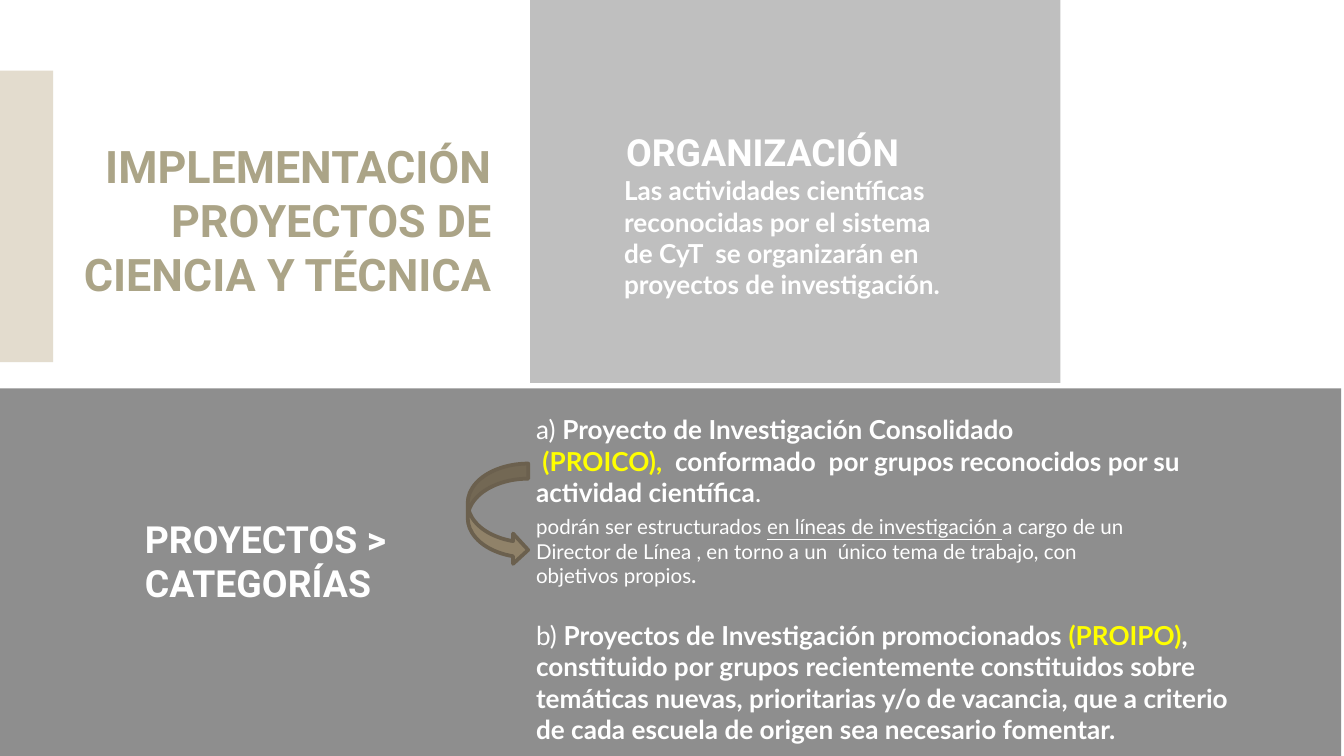
"""Build the slide on how science projects are organised."""
from dataclasses import dataclass, field
from typing import Any, NamedTuple

from lxml import etree
from pptx import Presentation
from pptx.dml.color import RGBColor
from pptx.enum.shapes import MSO_SHAPE
from pptx.enum.text import MSO_ANCHOR, MSO_AUTO_SIZE, PP_ALIGN
from pptx.oxml.ns import qn
from pptx.util import Emu, Pt

RECT, ARROW = MSO_SHAPE.RECTANGLE, MSO_SHAPE.CURVED_RIGHT_ARROW
TOP, MIDDLE, BOTTOM = MSO_ANCHOR.TOP, MSO_ANCHOR.MIDDLE, MSO_ANCHOR.BOTTOM
FIXED, GROW = MSO_AUTO_SIZE.NONE, MSO_AUTO_SIZE.SHAPE_TO_FIT_TEXT
LEFT, RIGHT = PP_ALIGN.LEFT, PP_ALIGN.RIGHT
SCALE = 4572
WIDE, HIGH = 2000, 1125
TITLE_ONLY = 5


@dataclass(frozen=True)
class Theme:
    """Colours, fonts and type sizes of the slide."""

    white: str = "FFFFFF"
    khaki: str = "ABA487"
    sand: str = "CFC3AC"
    silver: str = "BFBFBF"
    grey: str = "8E8E8E"
    yellow: str = "FFFF00"
    bronze: str = "908269"
    umber: str = "6B604E"
    head: str = "Roboto"
    text: str = "Lato"
    title: int = 24
    label: int = 20
    body: int = 14
    small: int = 11


THEME = Theme()


class Box(NamedTuple):
    """Place and size in px."""

    left: int
    top: int
    width: int
    height: int


@dataclass(frozen=True)
class Run:
    """A stretch of text in one format."""

    text: str
    bold: bool = True
    color: str = THEME.white
    under: bool = False


@dataclass(frozen=True)
class Block:
    """A text box with its paragraphs."""

    box: Box
    paras: list[list[Run]]
    size: int = THEME.body
    face: str = THEME.text
    align: Any = LEFT
    frame: dict[str, Any] = field(default_factory=dict)


@dataclass(frozen=True)
class Panel:
    """A filled preset shape."""

    box: Box
    fill: str
    kind: Any = RECT
    alpha: int = 100
    line: str = ""


def apply(target: Any, values: dict[str, Any]) -> None:
    """Set each named value on the target."""
    for name, value in values.items():
        setattr(target, name, value)


def scaled(box: Box) -> list[Emu]:
    """Turn px into EMU."""
    return [Emu(part * SCALE) for part in box]


def inset(side: int, edge: int) -> dict[str, Any]:
    """Give frame margins for the sides and for top and bottom."""
    return {"margin_left": Emu(side * SCALE), "margin_right": Emu(side * SCALE),
            "margin_top": Emu(edge * SCALE), "margin_bottom": Emu(edge * SCALE)}


def write(shape: Any, block: Block) -> None:
    """Fill a shape with the text of a block."""
    frame = shape.text_frame
    apply(frame, {"word_wrap": True, **block.frame})
    for index, runs in enumerate(block.paras):
        para = frame.add_paragraph() if index else frame.paragraphs[0]
        para.alignment = block.align
        for run in runs:
            part = para.add_run()
            part.text = run.text
            apply(part.font, {"name": block.face, "size": Pt(block.size),
                              "bold": run.bold, "underline": run.under})
            part.font.color.rgb = RGBColor.from_string(run.color)


def add_text(slide: Any, block: Block) -> None:
    """Add a text box."""
    write(slide.shapes.add_textbox(*scaled(block.box)), block)


def add_panel(slide: Any, panel: Panel) -> None:
    """Add a filled shape, with a line if it has one."""
    shape = slide.shapes.add_shape(panel.kind, *scaled(panel.box))
    shape.shadow.inherit = False
    shape.fill.solid()
    shape.fill.fore_color.rgb = RGBColor.from_string(panel.fill)
    if panel.alpha < 100:
        tint = shape.fill._xPr.find(".//" + qn("a:srgbClr"))
        etree.SubElement(tint, qn("a:alpha")).set("val", str(panel.alpha * 1000))
    if panel.line:
        shape.line.color.rgb = RGBColor.from_string(panel.line)
        shape.line.width = Pt(2)
    else:
        shape.line.fill.background()


EVEN = inset(20, 20)
LABEL = {"vertical_anchor": BOTTOM, "auto_size": FIXED, **EVEN}
NOTE = {"vertical_anchor": TOP, "auto_size": GROW, **inset(20, 10)}

TITLE = Block(
    Box(-5, 229, 756, 196),
    [[Run("IMPLEMENTACIÓN PROYECTOS DE CIENCIA Y TÉCNICA", color=THEME.khaki)]],
    THEME.title, THEME.head, RIGHT,
    {"vertical_anchor": MIDDLE, "auto_size": FIXED, **EVEN})

PANELS = [
    Panel(Box(0, 105, 79, 434), THEME.sand, alpha=58),
    Panel(Box(789, -6, 789, 576), THEME.silver),
    Panel(Box(-4, 578, 2000, 550), THEME.grey),
    Panel(Box(696, 690, 90, 151), THEME.bronze, ARROW, line=THEME.umber),
]

BLOCKS = [
    Block(Box(909, 240, 542, 206),
          [[Run("Las actividades científicas  reconocidas por el sistema de CyT  "
                "se organizarán en proyectos de investigación.")]],
          frame={"auto_size": FIXED, **EVEN}),
    Block(Box(912, 137, 628, 142), [[Run("ORGANIZACIÓN")]],
          THEME.label, THEME.head, frame=LABEL),
    Block(Box(196, 779, 628, 142), [[Run("PROYECTOS > CATEGORÍAS")]],
          THEME.label, THEME.head, frame=LABEL),
    Block(Box(778, 606, 1042, 162),
          [[Run("a) ", bold=False), Run("Proyecto de Investigación Consolidado")],
           [Run(" "), Run("(PROICO),  ", color=THEME.yellow),
            Run("conformado  por grupos reconocidos por su actividad científica"),
            Run(".", bold=False)]],
          frame=NOTE),
    Block(Box(778, 755, 916, 132),
          [[Run("podrán ser estructurados ", bold=False),
            Run("en líneas de investigación ", bold=False, under=True),
            Run("a cargo de un Director de Línea , en torno a un  único tema de "
                "trabajo, con objetivos propios", bold=False),
            Run(".")]],
          THEME.small, frame=NOTE),
    Block(Box(778, 912, 1072, 256),
          [[Run("b) ", bold=False), Run("Proyectos de Investigación promocionados "),
            Run("(PROIPO)", color=THEME.yellow),
            Run(", constituido por grupos recientemente constituidos sobre temáticas "
                "nuevas, prioritarias y/o de vacancia, que a criterio de cada escuela "
                "de origen sea necesario fomentar.")]],
          frame=NOTE),
]


def main() -> None:
    """Draw the slide and save it."""
    deck = Presentation()
    apply(deck, {"slide_width": Emu(WIDE * SCALE), "slide_height": Emu(HIGH * SCALE)})
    slide = deck.slides.add_slide(deck.slide_layouts[TITLE_ONLY])
    title = slide.shapes.title
    apply(title, dict(zip(Box._fields, scaled(TITLE.box))))
    write(title, TITLE)
    for panel in PANELS:
        add_panel(slide, panel)
    for block in BLOCKS:
        add_text(slide, block)
    deck.save("out.pptx")


if __name__ == "__main__":
    main()
